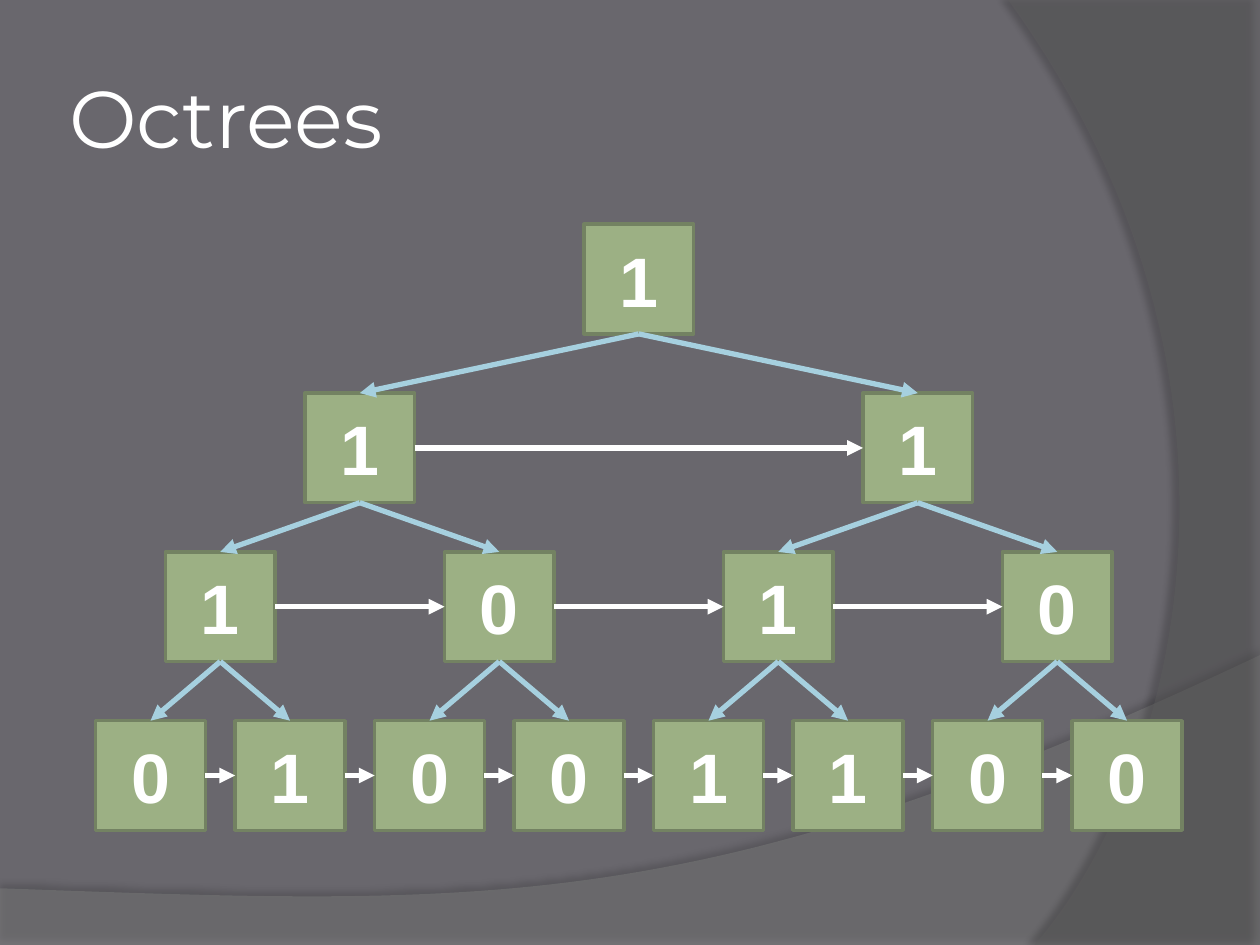
from lxml.etree import SubElement
from pptx import Presentation
from pptx.dml.color import RGBColor
from pptx.enum.shapes import MSO_CONNECTOR, MSO_SHAPE
from pptx.enum.text import MSO_ANCHOR, PP_ALIGN
from pptx.oxml.ns import qn
from pptx.util import Inches, Pt

TITLE_FORMAT = {"name": "Montserrat", "size": Pt(46), "bold": False}
NODE_FORMAT = {"name": "Arial", "size": Pt(40), "bold": True}
LEVELS = ["1", "11", "1010", "01001100"]
LEVEL_TOPS = [0, 1.34, 2.6, 3.94]
NODE_SIZE = 0.87
TOP, LEFT, BOTTOM, RIGHT = range(4)


def colour(hex_value):
    return RGBColor.from_string(hex_value)


def format_text(frame, text, formats, align):
    frame.text = text
    frame.vertical_anchor = MSO_ANCHOR.MIDDLE
    paragraph = frame.paragraphs[0]
    paragraph.alignment = align
    font = paragraph.runs[0].font
    for attribute, value in formats.items():
        setattr(font, attribute, value)
    font.color.rgb = colour("FFFFFF")


def bezier(start, control1, control2, end, steps=60):
    """Return points along a cubic curve, without its start."""
    points = []
    for step in range(1, steps + 1):
        t = step / steps
        weights = ((1 - t) ** 3, 3 * t * (1 - t) ** 2, 3 * t * t * (1 - t), t ** 3)
        points.append(tuple(
            sum(w * value for w, value in zip(weights, axis))
            for axis in zip(start, control1, control2, end)))
    return points


def add_wave(slide, outline, fill, opacity, shadow_opacity, distance, direction):
    """Add a translucent curved area with a soft shadow."""
    points = [(Inches(x), Inches(y)) for x, y in outline]
    builder = slide.shapes.build_freeform(*points[0])
    builder.add_line_segments(points[1:], close=True)
    wave = builder.convert_to_shape()
    wave.fill.solid()
    wave.fill.fore_color.rgb = colour(fill)
    wave.line.fill.background()
    wave.shadow.inherit = False
    properties = wave._element.spPr
    fill_colour = properties.find(qn("a:solidFill"))[0]
    SubElement(fill_colour, qn("a:alpha"), val=str(opacity * 1000))
    shadow = SubElement(
        properties.find(qn("a:effectLst")), qn("a:outerShdw"),
        blurRad=str(Pt(4)), dist=str(Pt(distance)), dir=str(direction * 60000),
        algn="ctr", rotWithShape="0")
    shadow_colour = SubElement(shadow, qn("a:srgbClr"), val="000000")
    SubElement(shadow_colour, qn("a:alpha"), val=str(shadow_opacity * 1000))


def add_backdrop(slide, width, height):
    slide.background.fill.solid()
    slide.background.fill.fore_color.rgb = colour("69676D")
    lower_start = (width, 5.2)
    lower = [(0, 7.05), (0, height), (width, height), lower_start]
    lower += bezier(lower_start, (5.59, 7.29), (3.91, 7.19), (0, 7.05))
    add_wave(slide, lower, "7F7F7F", 45, 35, 3.5, 270)
    right_start = (8.21, height)
    right = [(width, 0), (width, height), right_start]
    right += bezier(right_start, (9.35, 6.19), (10.18, 3), (8, 0))
    add_wave(slide, right, "5E5E5E", 40, 45, 4, 180)


def add_title(slide, left, top, width, height):
    title = slide.shapes.title
    title.left, title.top = Inches(left), Inches(top)
    title.width, title.height = Inches(width), Inches(height)
    frame = title.text_frame
    for side in ("left", "top", "right", "bottom"):
        setattr(frame, f"margin_{side}", Inches(0.05))
    format_text(frame, "Octrees", TITLE_FORMAT, PP_ALIGN.LEFT)
    slide.shapes._spTree.append(title._element)  # in front of the backdrop


def add_node(slide, centre, top, digit):
    node = slide.shapes.add_shape(
        MSO_SHAPE.RECTANGLE, Inches(centre - NODE_SIZE / 2), Inches(top),
        Inches(NODE_SIZE), Inches(NODE_SIZE))
    node.shadow.inherit = False
    node.fill.solid()
    node.fill.fore_color.rgb = colour("9CB084")
    node.line.color.rgb = colour("738262")
    node.line.width = Pt(2)
    format_text(node.text_frame, digit, NODE_FORMAT, PP_ALIGN.CENTER)
    return node


def add_arrow(slide, source, source_side, target, target_side, line_colour):
    arrow = slide.shapes.add_connector(MSO_CONNECTOR.STRAIGHT, 0, 0, 0, 0)
    arrow.begin_connect(source, source_side)
    arrow.end_connect(target, target_side)
    arrow.line.color.rgb = colour(line_colour)
    arrow.line.width = Pt(3)
    properties = arrow._element.spPr
    SubElement(properties.find(qn("a:ln")), qn("a:tailEnd"), type="triangle")
    SubElement(properties, qn("a:effectLst"))


def add_tree(slide, left, top, width):
    """Space the leaves evenly and centre each parent over its two children."""
    leaf_count = len(LEVELS[-1])
    pitch = (width - NODE_SIZE) / (leaf_count - 1)
    tree = []
    for digits, level_top in zip(LEVELS, LEVEL_TOPS):
        span = leaf_count / len(digits)
        tree.append([
            add_node(slide,
                     left + NODE_SIZE / 2 + pitch * (span * (i + 0.5) - 0.5),
                     top + level_top, digit)
            for i, digit in enumerate(digits)])
    for level in tree:
        for node, neighbour in zip(level, level[1:]):
            add_arrow(slide, node, RIGHT, neighbour, LEFT, "FFFFFF")
    for parents, children in zip(tree, tree[1:]):
        for i, child in enumerate(children):
            add_arrow(slide, parents[i // 2], BOTTOM, child, TOP, "A6D0DF")


def main():
    presentation = Presentation()
    presentation.slide_width, presentation.slide_height = Inches(10), Inches(7.5)
    slide = presentation.slides.add_slide(presentation.slide_layouts[5])
    add_backdrop(slide, 10, 7.5)
    add_title(slide, 0.5, 0.3, 8.17, 1.25)
    add_tree(slide, 0.76, 1.78, 8.62)
    presentation.save("out.pptx")


if __name__ == "__main__":
    main()
